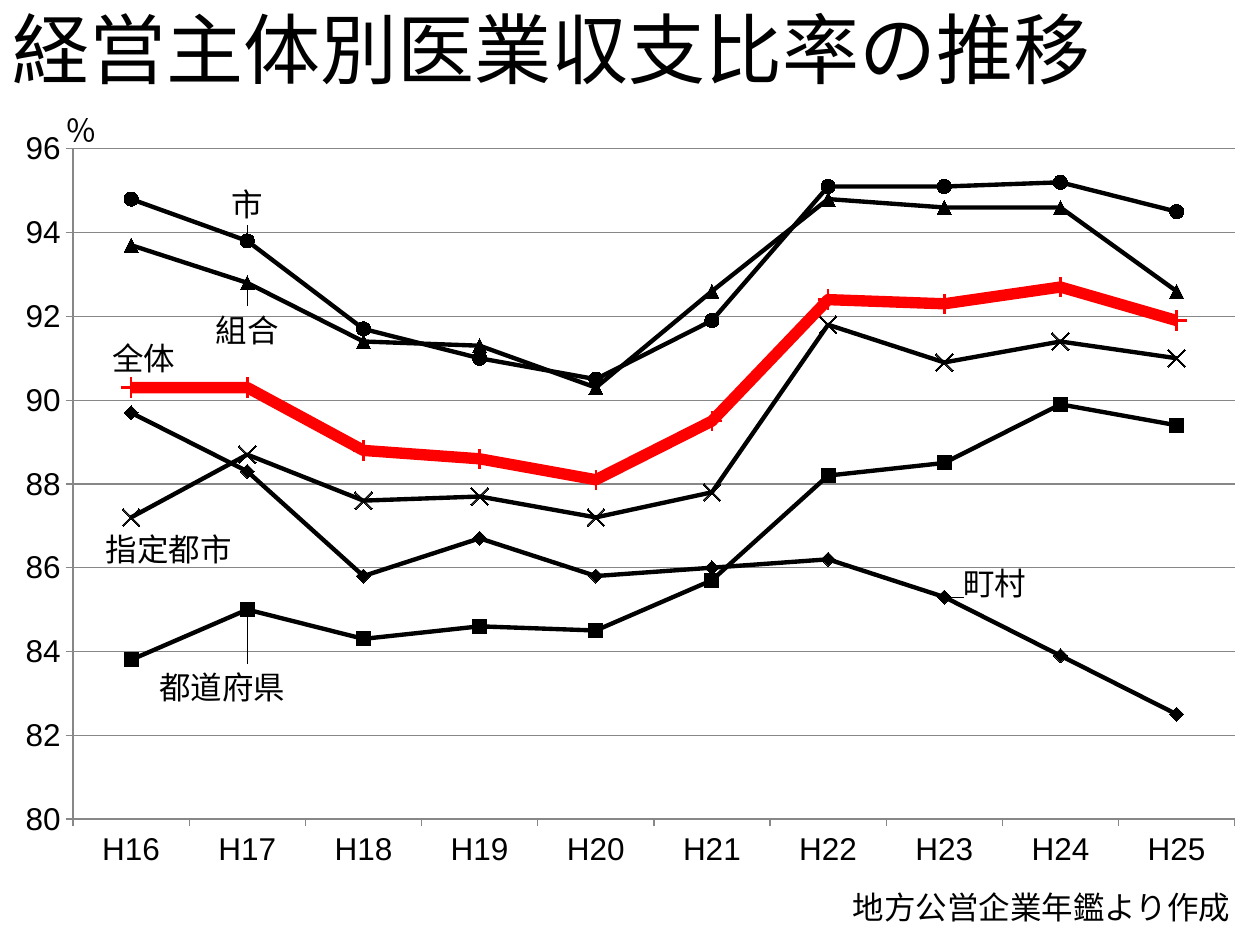
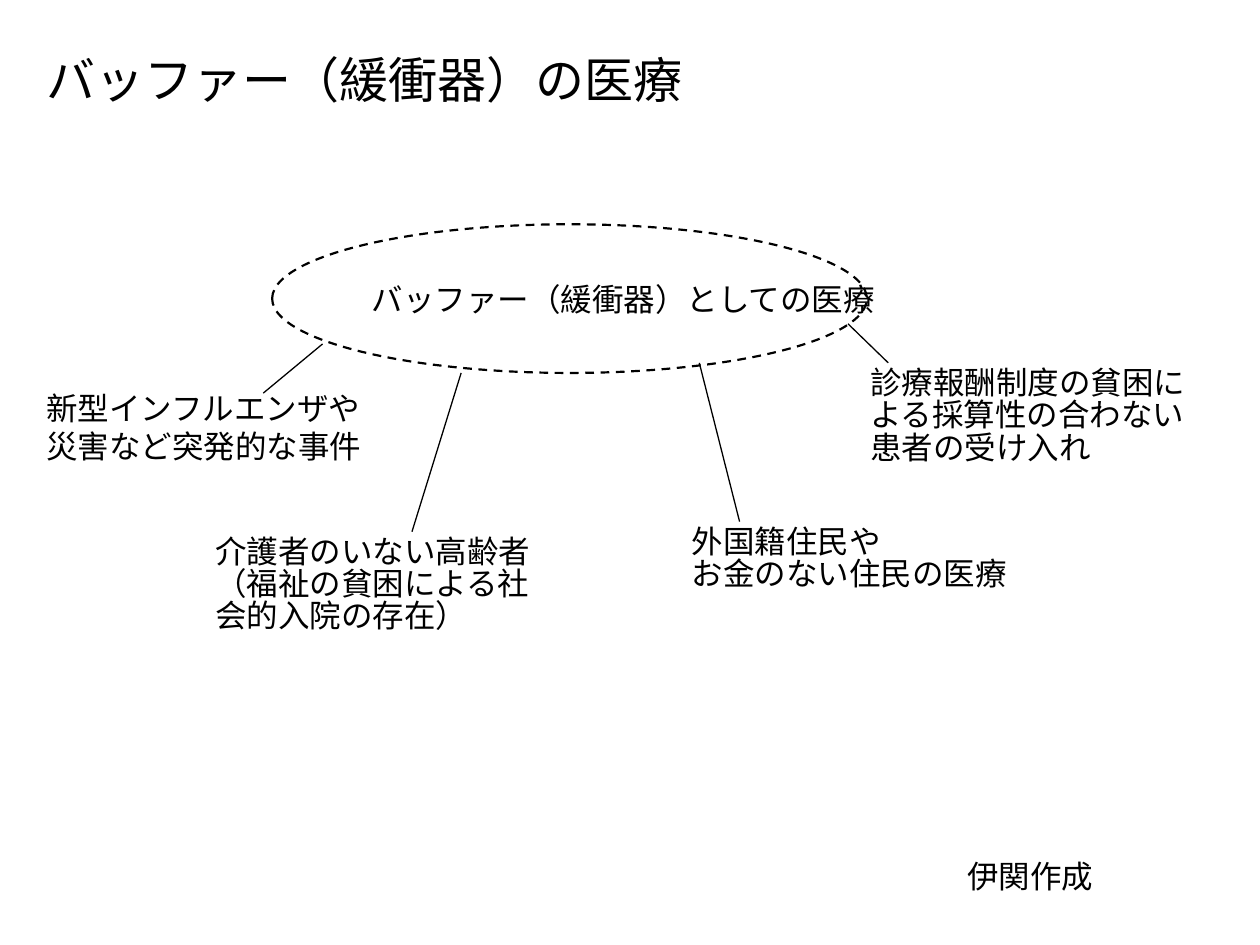
from pptx import Presentation
from pptx.chart.data import CategoryChartData
from pptx.dml.color import RGBColor
from pptx.enum.chart import XL_CHART_TYPE, XL_LABEL_POSITION, XL_MARKER_STYLE, XL_TICK_MARK
from pptx.enum.dml import MSO_LINE
from pptx.enum.shapes import MSO_CONNECTOR, MSO_SHAPE
from pptx.enum.text import MSO_ANCHOR, PP_ALIGN
from pptx.oxml.ns import qn
from pptx.oxml.xmlchemy import OxmlElement
from pptx.util import Inches, Pt

HUES = {"ink": "000000", "total": "FF0000", "grid": "878787"}
FACE = "Arial"
YEARS = [f"H{year}" for year in range(16, 26)]
RATES = [
    ("都道府県", [83.8, 85, 84.3, 84.6, 84.5, 85.7, 88.2, 88.5, 89.9, 89.4],
     "SQUARE", 8, (1, -0.02, 0.1)),
    ("指定都市", [87.2, 88.7, 87.6, 87.7, 87.2, 87.8, 91.8, 90.9, 91.4, 91],
     "X", 10, (0, 0.03, 0.04)),
    ("市", [94.8, 93.8, 91.7, 91, 90.5, 91.9, 95.1, 95.1, 95.2, 94.5],
     "CIRCLE", 8, (1, 0, -0.05)),
    ("町村", [89.7, 88.3, 85.8, 86.7, 85.8, 86, 86.2, 85.3, 83.9, 82.5],
     "DIAMOND", 8, (7, 0.04, -0.02)),
    ("組合", [93.7, 92.8, 91.4, 91.3, 90.3, 92.6, 94.8, 94.6, 94.6, 92.6],
     "TRIANGLE", 8, (1, 0, 0.06)),
    ("全体", [90.3, 90.3, 88.8, 88.6, 88.1, 89.5, 92.4, 92.3, 92.7, 91.9],
     "PLUS", 11, (0, 0.01, -0.04)),
]
CAUSES = [
    ((0.27, 3.04, 2.76, 0.7), ["新型インフルエンザや災害など突発的な事件"], 1),
    ((5.39, 4.14, 2.88, 0.61), ["外国籍住民や", "お金のない住民の医療"], 0.85),
    ((1.61, 4.22, 2.91, 0.87),
     ["介護者のいない高齢者", "（福祉の貧困による社会的入院の存在）"], 0.85),
    ((6.81, 2.88, 2.87, 0.87),
     ["診療報酬制度の貧困による採算性の合わない患者の受け入れ"], 0.85),
]
LINKS = [
    (2.56, 2.73, 2.09, 3.12),
    (3.66, 2.96, 3.27, 4.22),
    (5.55, 2.88, 5.87, 4.14),
    (6.73, 2.57, 7.05, 2.88),
]


def apply(item, form):
    for name, value in form.items():
        setattr(item, name, value)


def color(name):
    return RGBColor.from_string(HUES[name])


def style(font, size=18):
    apply(font, {"name": FACE, "size": Pt(size)})
    font.color.rgb = color("ink")


def stroke(line, hue, width):
    line.color.rgb = color(hue)
    line.width = Pt(width)


def write(shape, lines, size=18, gap=1, **form):
    frame = shape.text_frame
    apply(frame, {"word_wrap": True, **form})
    frame.text = "\n".join(lines)
    for para in frame.paragraphs:
        apply(para, {"alignment": PP_ALIGN.LEFT, "line_spacing": gap})
        style(para.font, size)


def add_text(slide, box, lines, size=18, gap=1, **form):
    shape = slide.shapes.add_textbox(*map(Inches, box))
    write(shape, lines, size, gap, **form)


def add_title(slide, box, text, size):
    add_text(slide, box, [text], size, vertical_anchor=MSO_ANCHOR.MIDDLE)


def add_link(slide, ends):
    link = slide.shapes.add_connector(MSO_CONNECTOR.STRAIGHT, *map(Inches, ends))
    stroke(link.line, "ink", 0.75)
    link._element.spPr.append(OxmlElement("a:effectLst"))


def make_layout(parts):
    layout = OxmlElement("c:layout")
    manual = OxmlElement("c:manualLayout")
    layout.append(manual)
    for tag, value in parts.items():
        node = OxmlElement(f"c:{tag}")
        node.set("val", str(value))
        manual.append(node)
    return layout


def set_plot(chart):
    area = chart._chartSpace.find(".//" + qn("c:plotArea"))
    for old in area.findall(qn("c:layout")):
        area.remove(old)
    area.insert(0, make_layout({
        "layoutTarget": "inner", "xMode": "edge", "yMode": "edge",
        "x": 0.058, "y": 0.043, "w": 0.922, "h": 0.875,
    }))


def add_label(series, spot):
    index, across, down = spot
    series.data_labels.show_value = False
    label = series.points[index].data_label
    style(label.font)
    label.position = XL_LABEL_POSITION.CENTER
    node = series._element.find(".//" + qn("c:dLbl"))
    node.find(qn("c:idx")).addnext(make_layout({"x": across, "y": down}))
    for tag, flag in {"c:showVal": "0", "c:showSerName": "1"}.items():
        node.find(qn(tag)).set("val", flag)


def set_series(series, mark, size, spot):
    total = series.name == "全体"
    hue = "total" if total else "ink"
    series.smooth = False
    stroke(series.format.line, hue, 6.5 if total else 2.5)
    marker = series.marker
    apply(marker, {"style": getattr(XL_MARKER_STYLE, mark), "size": size})
    marker.format.fill.solid()
    marker.format.fill.fore_color.rgb = color(hue)
    stroke(marker.format.line, hue, 0.75)
    add_label(series, spot)


def set_axis(axis, **form):
    apply(axis, {"major_tick_mark": XL_TICK_MARK.OUTSIDE,
                 "minor_tick_mark": XL_TICK_MARK.NONE, **form})
    stroke(axis.format.line, "grid", 0.75)
    style(axis.tick_labels.font)


def add_rates(slide, box):
    data = CategoryChartData()
    data.categories = YEARS
    for name, values, *rest in RATES:
        data.add_series(name, values)
    chart = slide.shapes.add_chart(
        XL_CHART_TYPE.LINE_MARKERS, *map(Inches, box), data).chart
    apply(chart, {"has_legend": False, "has_title": False})
    style(chart.font)
    chart.plots[0].vary_by_categories = False
    set_axis(chart.category_axis, has_major_gridlines=False)
    set_axis(chart.value_axis, minimum_scale=80, maximum_scale=96,
             major_unit=2, has_major_gridlines=True)
    stroke(chart.value_axis.major_gridlines.format.line, "grid", 0.75)
    for series, (name, values, mark, size, spot) in zip(chart.plots[0].series, RATES):
        set_series(series, mark, size, spot)
    set_plot(chart)


def add_oval(slide, box, text):
    oval = slide.shapes.add_shape(MSO_SHAPE.OVAL, *map(Inches, box))
    oval.shadow.inherit = False
    oval.fill.background()
    stroke(oval.line, "ink", 1.25)
    oval.line.dash_style = MSO_LINE.DASH
    write(oval, [text], word_wrap=False, vertical_anchor=MSO_ANCHOR.MIDDLE)


def draw_trend(slide):
    add_title(slide, (0, 0, 10, 0.75), "経営主体別医業収支比率の推移", 44)
    add_rates(slide, (0, 0.92, 10, 6.08))
    add_text(slide, (0.42, 0.83, 0.58, 0.4), ["％"])
    add_text(slide, (6.67, 7, 3.33, 0.4), ["地方公営企業年鑑より作成"])


def draw_buffer(slide):
    add_title(slide, (0.27, 0.28, 9, 0.69), "バッファー（緩衝器）の医療", 28)
    add_oval(slide, (2.16, 1.78, 4.72, 1.18), "バッファー（緩衝器）としての医療")
    for box, lines, gap in CAUSES:
        add_text(slide, box, lines, gap=gap)
    for ends in LINKS:
        add_link(slide, ends)
    add_text(slide, (7.58, 6.75, 2.13, 0.4), ["伊関作成"])


def main():
    deck = Presentation()
    apply(deck, {"slide_width": Inches(10), "slide_height": Inches(7.5)})
    for draw in (draw_trend, draw_buffer):
        draw(deck.slides.add_slide(deck.slide_layouts[6]))
    deck.save("out.pptx")


if __name__ == "__main__":
    main()
